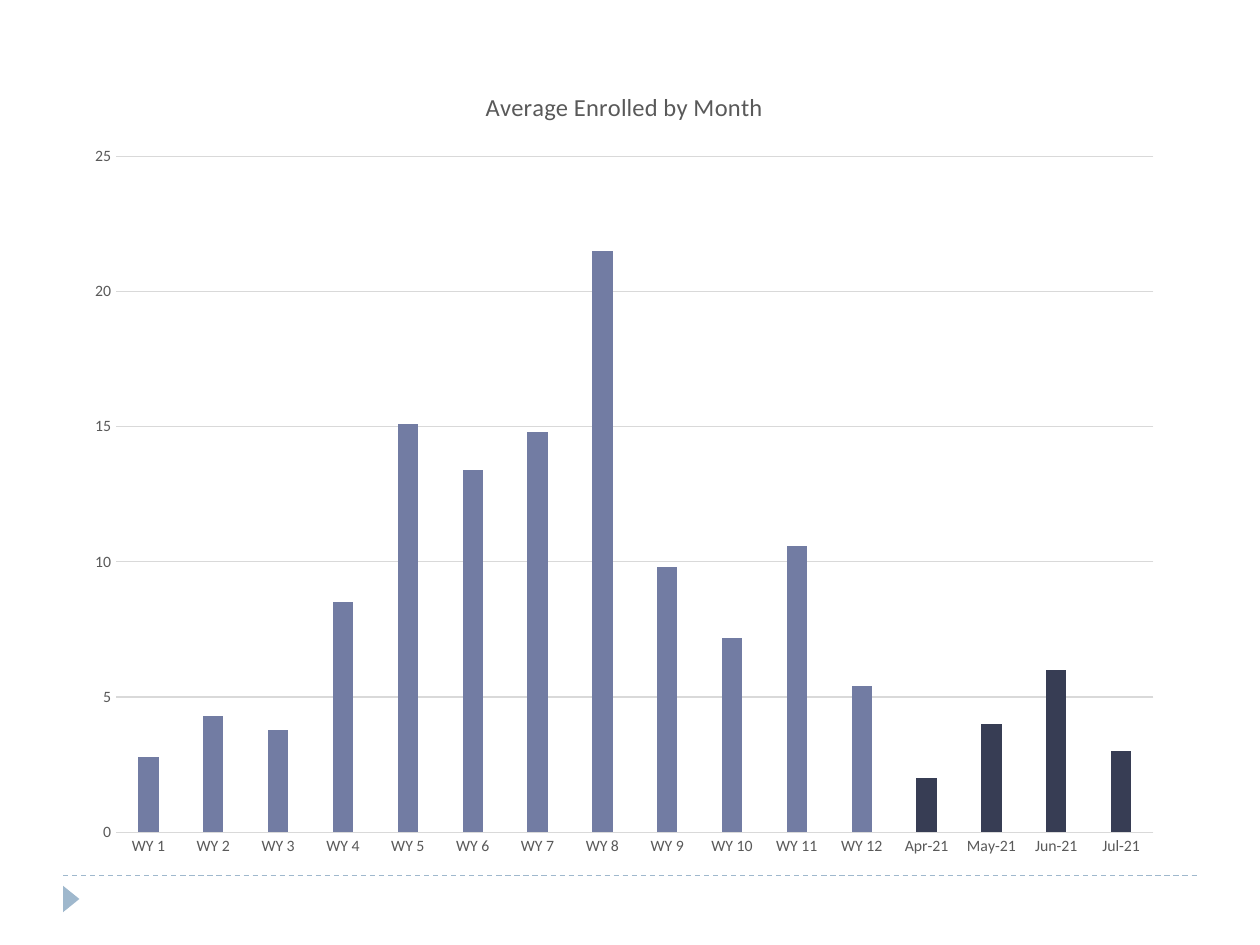
"""Build a one-slide column chart of average enrolment by month."""
import pptx
import pptx.chart.data
import pptx.dml.color
import pptx.enum.chart
import pptx.enum.dml
import pptx.enum.shapes
import pptx.oxml
import pptx.util

TITLE = "Average Enrolled by Month"
WAIVER_YEARS = [2.8, 4.3, 3.8, 8.5, 15.1, 13.4, 14.8, 21.5, 9.8, 7.2, 10.6, 5.4]
RECENT_MONTHS = {"Apr-21": 2, "May-21": 4, "Jun-21": 6, "Jul-21": 3}
AXIS_TOP, AXIS_STEP = 25, 5

THEME = {
    "font": "Calibri", "title_size": 14, "axis_size": 9, "hairline": 0.75,
    "text": "595959", "grid": "D9D9D9", "year": "727CA3", "month": "373D54",
    "accent": "9FB8CD",
}
WIDTH, HEIGHT = 10, 7.5
MARGIN = 0.05 * WIDTH
RULE_Y = 6.95
CHART_BOX = (0.58, 0.5, 8.75, 6.42)
MARKER_BOX = (0.46, 7.07, 0.21, 0.13)


def inches(*lengths):
    return [pptx.util.Inches(length) for length in lengths]


def color(name):
    return pptx.dml.color.RGBColor.from_string(THEME[name])


def paint(fill, name):
    fill.solid()
    fill.fore_color.rgb = color(name)


def style_font(font, size):
    font.name = THEME["font"]
    font.size = pptx.util.Pt(THEME[size])
    font.bold = False
    font.color.rgb = color("text")


def style_line(line, name):
    line.color.rgb = color(name)
    line.width = pptx.util.Pt(THEME["hairline"])


def add_footer(slide):
    rule = slide.shapes.add_connector(
        pptx.enum.shapes.MSO_CONNECTOR.STRAIGHT,
        *inches(MARGIN, RULE_Y, WIDTH - MARGIN, RULE_Y))
    style_line(rule.line, "accent")
    rule.line.dash_style = pptx.enum.dml.MSO_LINE.DASH
    rule._element.spPr.append(pptx.oxml.parse_xml(
        '<a:effectLst xmlns:a="http://schemas.openxmlformats.org/drawingml/2006/main"/>'))

    marker = slide.shapes.add_shape(
        pptx.enum.shapes.MSO_SHAPE.ISOSCELES_TRIANGLE, *inches(*MARKER_BOX))
    marker.rotation = 90
    marker.shadow.inherit = False
    paint(marker.fill, "accent")
    marker.line.fill.background()


def add_enrolment_chart(slide):
    enrolment = pptx.chart.data.CategoryChartData()
    years = [f"WY {number}" for number in range(1, len(WAIVER_YEARS) + 1)]
    enrolment.categories = years + list(RECENT_MONTHS)
    enrolment.add_series("Series 1", WAIVER_YEARS + list(RECENT_MONTHS.values()))
    chart = slide.shapes.add_chart(
        pptx.enum.chart.XL_CHART_TYPE.COLUMN_CLUSTERED,
        *inches(*CHART_BOX), enrolment).chart
    chart.has_legend = False
    chart.has_title = True
    heading = chart.chart_title.text_frame.paragraphs[0].add_run()
    heading.text = TITLE
    style_font(heading.font, "title_size")
    chart.chart_title.include_in_layout = False

    for axis in (chart.category_axis, chart.value_axis):
        style_font(axis.tick_labels.font, "axis_size")
        axis.major_tick_mark = pptx.enum.chart.XL_TICK_MARK.NONE
        axis.minor_tick_mark = pptx.enum.chart.XL_TICK_MARK.NONE
    style_line(chart.category_axis.format.line, "grid")
    scale = chart.value_axis
    scale.minimum_scale, scale.maximum_scale = 0, AXIS_TOP
    scale.major_unit = AXIS_STEP
    scale.format.line.fill.background()
    style_line(scale.major_gridlines.format.line, "grid")

    columns = chart.plots[0]
    columns.gap_width, columns.overlap = 219, -27
    columns.vary_by_categories = False
    averages = columns.series[0]
    averages.invert_if_negative = False
    paint(averages.format.fill, "year")
    for offset in range(len(RECENT_MONTHS)):
        paint(averages.points[len(years) + offset].format.fill, "month")


def main():
    deck = pptx.Presentation()
    deck.slide_width, deck.slide_height = inches(WIDTH, HEIGHT)
    slide = deck.slides.add_slide(deck.slide_layouts[6])
    add_footer(slide)
    add_enrolment_chart(slide)
    deck.save("out.pptx")


if __name__ == "__main__":
    main()
